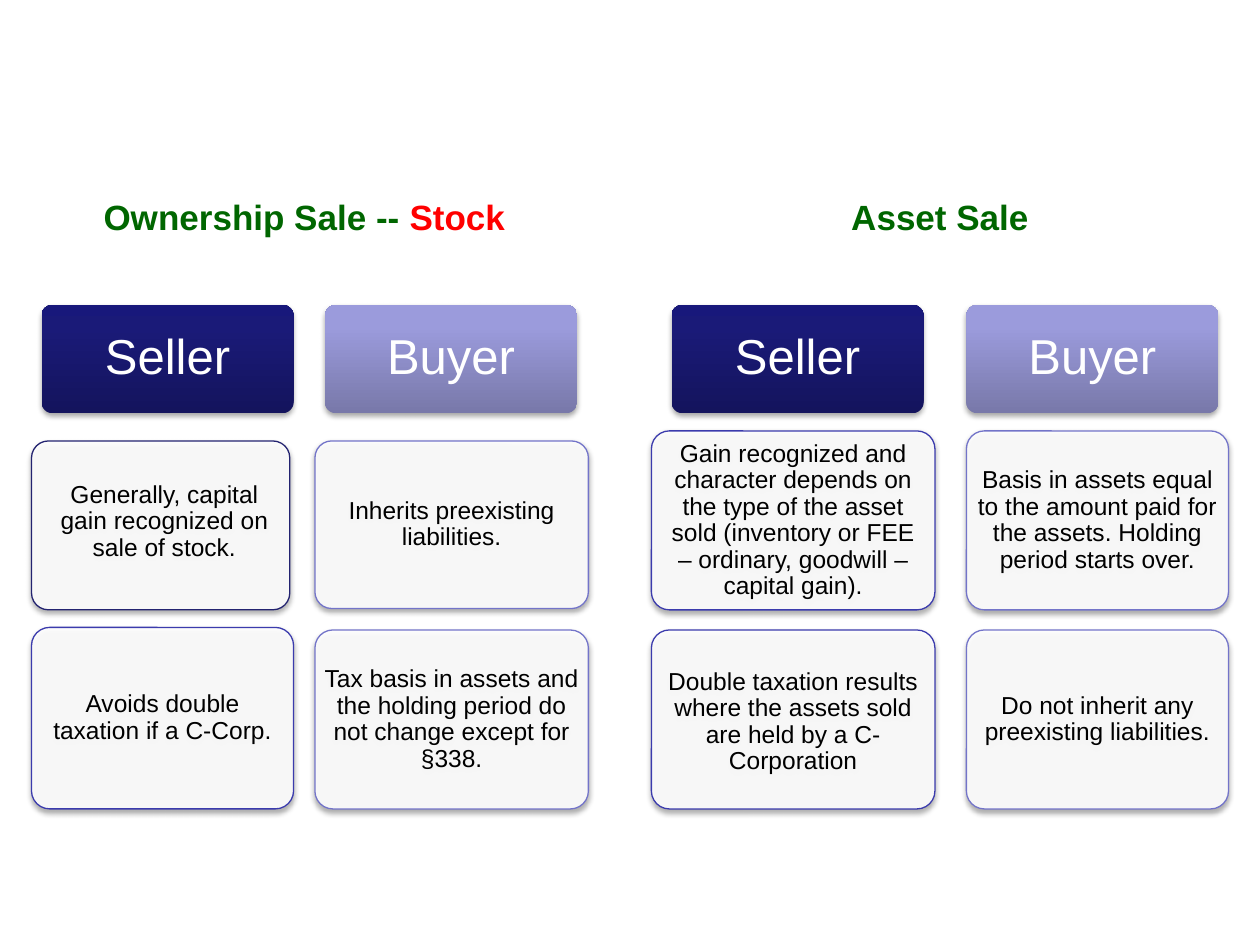
from dataclasses import dataclass

from lxml import etree
from pptx import Presentation
from pptx import util as u
from pptx.dml.color import RGBColor
from pptx.enum import shapes, text
from pptx.oxml.ns import qn


@dataclass(frozen=True)
class Theme:
    font: str = "Arial"
    heading_size: int = 20
    party_size: int = 28
    card_size: int = 14
    heading: str = "006600"
    accent: str = "FF0000"
    white: str = "FFFFFF"
    black: str = "000000"
    seller_line: str = "3B3BAD"
    seller_dark_line: str = "232370"
    buyer_line: str = "7374C9"
    seller_fill: tuple = ((0, "14145D"), (80, "1A1A78"), (100, "18187B"))
    buyer_fill: tuple = ((0, "7878A9"), (80, "9B9BDC"), (100, "9B9BDE"))


def add_child(parent, tag, **attributes):
    return etree.SubElement(parent, qn(tag), {k: str(v) for k, v in attributes.items()})


def add_color(parent, color, opacity=100):
    node = add_child(parent, "a:srgbClr", val=color)
    if opacity < 100:
        add_child(node, "a:alpha", val=opacity * 1000)


class SaleSlide:
    def __init__(self, slide, theme):
        self.slide = slide
        self.theme = theme

    def style_run(self, run, size, color, bold=False):
        run.font.name = self.theme.font
        run.font.size = u.Pt(size)
        run.font.bold = bold
        run.font.color.rgb = RGBColor.from_string(color)

    def heading(self, index, left, width, *parts):
        """Fill a body placeholder with (wording, color) parts on one line."""
        holder = next(p for p in self.slide.placeholders
                      if p.placeholder_format.idx == index)
        holder.left, holder.top = u.Inches(left), u.Inches(1.5)
        holder.width, holder.height = u.Inches(width), u.Inches(0.67)
        frame = holder.text_frame
        frame.vertical_anchor = text.MSO_ANCHOR.TOP
        line = frame.paragraphs[0]
        line.alignment = text.PP_ALIGN.CENTER
        line.space_before = u.Pt(0)
        for wording, color in parts:
            run = line.add_run()
            run.text = wording
            self.style_run(run, self.theme.heading_size, color, bold=True)

    def remove_empty_placeholders(self):
        for holder in list(self.slide.placeholders):
            if not holder.text_frame.text:
                holder.element.getparent().remove(holder.element)

    def rounded_box(self, box, wording, size, color, margins):
        """Add a shadowed box; box and margins are in inches, margins from left clockwise."""
        shape = self.slide.shapes.add_shape(
            shapes.MSO_SHAPE.ROUNDED_RECTANGLE, *map(u.Inches, box))
        shape.adjustments[0] = 0.1
        frame = shape.text_frame
        frame.word_wrap = True
        frame.vertical_anchor = text.MSO_ANCHOR.MIDDLE
        (frame.margin_left, frame.margin_top,
         frame.margin_right, frame.margin_bottom) = map(u.Inches, margins)
        frame.text = wording
        line = frame.paragraphs[0]
        line.alignment = text.PP_ALIGN.CENTER
        line.line_spacing = 0.9
        self.style_run(line.runs[0], size, color)
        self.soft_shadow(shape)
        return shape

    def soft_shadow(self, shape):
        shape.shadow.inherit = False
        effects = shape.element.spPr.find(qn("a:effectLst"))
        shadow = add_child(effects, "a:outerShdw", blurRad=u.Pt(3.1), dist=u.Pt(1.8),
                           dir=90 * 60000, rotWithShape=0)
        add_color(shadow, self.theme.black, 35)

    def party(self, left, wording, stops):
        shape = self.rounded_box((left, 2.42, 2, 0.86), wording, self.theme.party_size,
                                 self.theme.white, (0.06, 0.04, 0.06, 0.04))
        shape.line.fill.background()
        shape.fill.gradient()
        shape.fill.gradient_angle = 90
        stop_list = shape.element.spPr.find(qn("a:gradFill")).find(qn("a:gsLst"))
        for stop in list(stop_list):
            stop_list.remove(stop)
        for position, color in stops:
            add_color(add_child(stop_list, "a:gs", pos=position * 1000), color)

    def card(self, box, wording, line_color, margins=(0.03, 0.02, 0.03, 0.02)):
        shape = self.rounded_box(box, wording, self.theme.card_size,
                                 self.theme.black, margins)
        shape.fill.solid()
        shape.fill.fore_color.rgb = RGBColor.from_string(self.theme.white)
        fill = shape.element.spPr.find(qn("a:solidFill"))
        add_child(fill[0], "a:alpha", val=90000)
        shape.line.color.rgb = RGBColor.from_string(line_color)
        shape.line.width = u.Pt(0.75)


def main():
    theme = Theme()
    deck = Presentation()
    deck.slide_width, deck.slide_height = u.Inches(10), u.Inches(7.5)
    comparison_layout = deck.slide_layouts[4]
    sale = SaleSlide(deck.slides.add_slide(comparison_layout), theme)

    sale.heading(1, 0.33, 4.17, ("Ownership Sale -- ", theme.heading),
                 ("Stock", theme.accent))
    sale.heading(3, 5.17, 4.58, ("Asset Sale", theme.heading))
    sale.remove_empty_placeholders()

    for seller_left, buyer_left in ((0.33, 2.58), (5.33, 7.67)):
        sale.party(seller_left, "Seller", theme.seller_fill)
        sale.party(buyer_left, "Buyer", theme.buyer_fill)

    stock_seller_cards = (
        ((0.25, 3.5, 2.05, 1.34), "Generally, capital gain recognized on sale of stock.",
         theme.seller_dark_line, (0.07, 0.02, 0.01, 0.08)),
        ((0.25, 4.98, 2.08, 1.44), "Avoids double taxation if a C-Corp.",
         theme.seller_line),
    )
    stock_buyer_cards = (
        ((2.5, 3.5, 2.17, 1.33), "Inherits preexisting liabilities.", theme.buyer_line),
        ((2.5, 5, 2.17, 1.42),
         "Tax basis in assets and the holding period do not change except for §338.",
         theme.buyer_line),
    )
    asset_seller_cards = (
        ((5.17, 3.42, 2.25, 1.42),
         "Gain recognized and character depends on the type of the asset sold "
         "(inventory or FEE – ordinary, goodwill – capital gain).",
         theme.seller_line, (0.08, 0.02, 0.08, 0.02)),
        ((5.17, 5, 2.25, 1.42),
         "Double taxation results where the assets sold are held by a C-Corporation",
         theme.seller_line, (0.03, 0.06, 0.03, 0.02)),
    )
    asset_buyer_cards = (
        ((7.67, 3.42, 2.08, 1.42),
         "Basis in assets equal to the amount paid for the assets. "
         "Holding period starts over.", theme.buyer_line),
        ((7.67, 5, 2.08, 1.42), "Do not inherit any preexisting liabilities.",
         theme.buyer_line),
    )
    for cards in (stock_seller_cards, stock_buyer_cards,
                  asset_seller_cards, asset_buyer_cards):
        for details in cards:
            sale.card(*details)

    deck.save("out.pptx")


if __name__ == "__main__":
    main()
